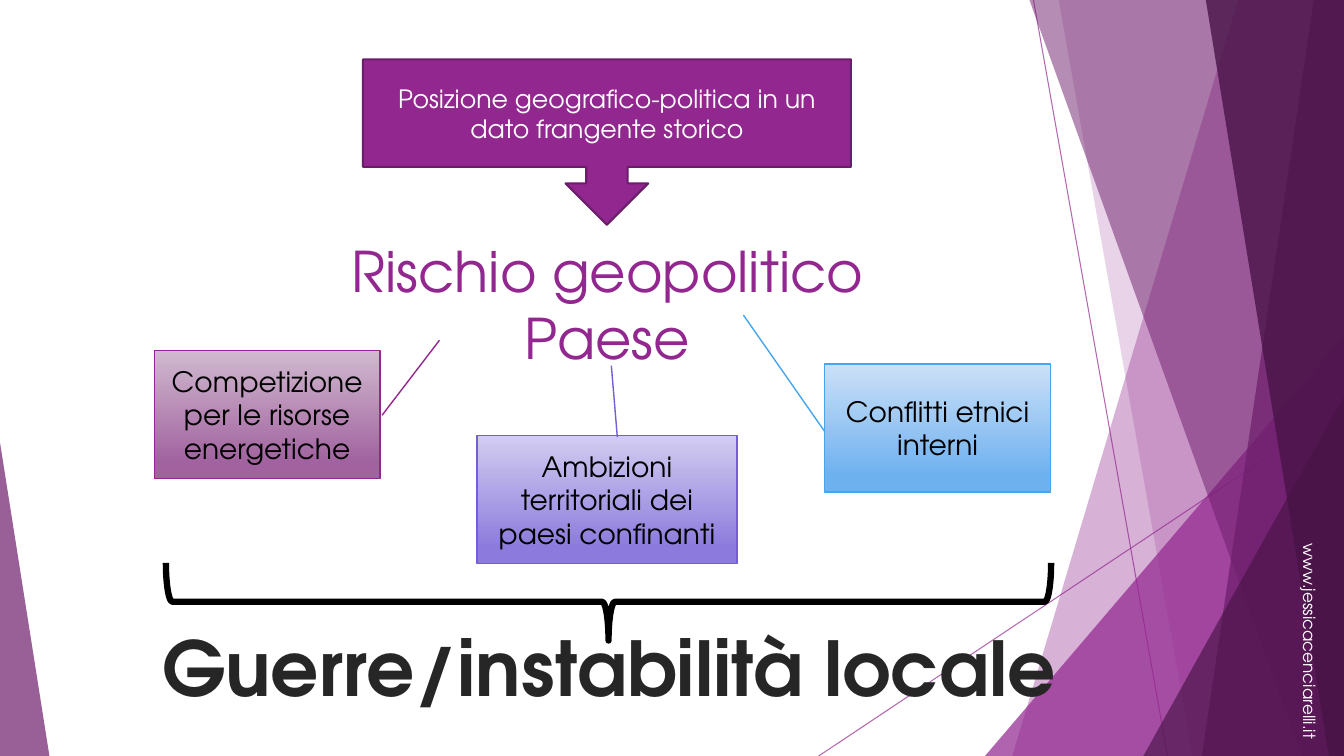
from dataclasses import dataclass

from lxml import etree
from pptx import Presentation, util as u
from pptx.dml.color import RGBColor
from pptx.enum import shapes, text
from pptx.oxml import ns

PX = 9144  # EMU per px, 100 px to the inch
WIDTH, HEIGHT = 1333, 750
PRESET = shapes.MSO_SHAPE


@dataclass(frozen=True)
class Theme:
    font: str = "TeX Gyre Adventor"
    white: str = "FFFFFF"
    black: str = "000000"
    ink: str = "262626"
    purple: str = "92278F"
    plum: str = "6D1D6B"
    dark: str = "491447"
    edge: str = "6C1D6A"
    mauve: tuple = ("D0B9CF", "A1629F", "92278F")
    violet: tuple = ("D2CDF0", "8C7BDD", "755DD9")
    blue: tuple = ("CCE0F8", "6EB1EF", "45A5ED")
    conclusion: int = 54
    title: int = 40
    factor: int = 20
    cause: int = 18
    credit: int = 12


def px(*lengths):
    return [u.Emu(length * PX) for length in lengths]


def set_alpha(fill, percent):
    """Make a solid fill translucent; percent is its opacity."""
    color = fill._xPr.find(".//" + ns.qn("a:srgbClr"))
    etree.SubElement(color, ns.qn("a:alpha"), val=str(percent * 1000))


def write(shape, lines, *, size, color, font, bold=False, outline=None):
    frame = shape.text_frame
    for index, line in enumerate(lines):
        para = frame.paragraphs[0] if index == 0 else frame.add_paragraph()
        para.alignment = text.PP_ALIGN.CENTER
        span = para.add_run()
        span.text = line
        span.font.name, span.font.size, span.font.bold = font, u.Pt(size), bold
        span.font.color.rgb = RGBColor.from_string(color)
        if outline:
            border = etree.Element(ns.qn("a:ln"), w=str(u.Pt(1.06)))
            solid = etree.SubElement(border, ns.qn("a:solidFill"))
            etree.SubElement(solid, ns.qn("a:srgbClr"), val=outline)
            span.font._element.insert(0, border)


class Painter:
    def __init__(self, page, theme):
        self.page, self.theme = page, theme

    def style(self, shape, fill=None, opacity=None, line=None, weight=1):
        shape.shadow.inherit = False
        if fill is None:
            shape.fill.background()
        elif isinstance(fill, tuple):
            shape.fill.gradient()
            shape.fill.gradient_angle = 270
            for stop, place, color in zip(shape.fill.gradient_stops, (0, 0.88), fill):
                stop.position = place
                stop.color.rgb = RGBColor.from_string(color)
        else:
            shape.fill.solid()
            shape.fill.fore_color.rgb = RGBColor.from_string(fill)
            if opacity:
                set_alpha(shape.fill, opacity)
        if line:
            shape.line.color.rgb = RGBColor.from_string(line)
            shape.line.width = u.Pt(weight)
        else:
            shape.line.fill.background()

    def shape(self, kind, at, adjust=(), rotation=0, **style):
        shape = self.page.shapes.add_shape(kind, *px(*at))
        for index, value in enumerate(adjust):
            shape.adjustments[index] = value
        shape.rotation = rotation
        self.style(shape, **style)
        return shape

    def ray(self, start, end):
        ray = self.page.shapes.add_connector(
            shapes.MSO_CONNECTOR.STRAIGHT, *px(*start, *end))
        ray.line.color.rgb = RGBColor.from_string(self.theme.purple)
        ray.line.width = u.Pt(0.75)
        set_alpha(ray.line.fill, 70)
        etree.SubElement(ray._element.spPr, ns.qn("a:effectLst"))

    def shard(self, top, bottom, color, opacity):
        """Fill the page from a slanted left edge to the right border."""
        builder = self.page.shapes.build_freeform(top, 0, scale=PX)
        builder.add_line_segments([(WIDTH, 0), (WIDTH, HEIGHT), (bottom, HEIGHT)])
        self.style(builder.convert_to_shape(), color, opacity)

    def wedge(self, left, top, width, apex, color, opacity):
        """Stand a right triangle on the bottom edge of the page."""
        self.shape(PRESET.ISOSCELES_TRIANGLE, (left, top, width, HEIGHT - top),
                   [apex], fill=color, opacity=opacity)

    def panel(self, kind, at, words, size, color, **style):
        panel = self.shape(kind, at, **style)
        panel.text_frame.word_wrap = True
        panel.text_frame.vertical_anchor = text.MSO_ANCHOR.MIDDLE
        write(panel, [words], size=size, color=color, font=self.theme.font)

    def label(self, at, lines, rotation=0, **style):
        box = self.page.shapes.add_textbox(*px(*at))
        box.rotation = rotation
        box.text_frame.word_wrap = False
        box.text_frame.auto_size = text.MSO_AUTO_SIZE.SHAPE_TO_FIT_TEXT
        write(box, lines, font=self.theme.font, **style)


def draw_backdrop(painter, theme):
    painter.ray((1025, 0), (1158, HEIGHT))
    painter.ray((WIDTH, 403), (812, HEIGHT))
    painter.shard(1228, 1004, theme.purple, 36)
    painter.shard(1050, 1183, theme.purple, 20)
    painter.wedge(977, 333, 356, 1, theme.purple, 72)
    painter.shard(1021, 1291, theme.plum, 50)
    painter.shard(1303, 1192, theme.plum, 70)
    painter.shard(1196, 1318, theme.dark, 80)
    painter.wedge(1134, 393, 199, 1, theme.dark, 66)
    painter.wedge(0, 439, 49, 0, theme.plum, 70)


def draw_diagram(painter, theme):
    painter.label((336, 230, 533, 145), ["Rischio geopolitico", "Paese"],
                  size=theme.title, color=theme.purple)
    painter.panel(PRESET.DOWN_ARROW_CALLOUT, (360, 59, 484, 164),
                  "Posizione geografico-politica in un dato frangente storico",
                  theme.cause, theme.white,
                  fill=theme.purple, line=theme.edge, weight=1.5)
    factors = [
        ("Competizione per le risorse energetiche", (153, 348, 224, 127),
         (-0.082, 1.263, 0.504, 1.009), theme.mauve),
        ("Ambizioni territoriali dei paesi confinanti", (473, 432, 258, 127),
         (-0.545, 0.517, 0.014, 0.54), theme.violet),
        ("Conflitti etnici interni", (818, 361, 224, 127),
         (-0.381, -0.36, 0.531, 0.001), theme.blue),
    ]
    for words, at, leader, (light, deep, border) in factors:
        painter.panel(PRESET.LINE_CALLOUT_1, at, words, theme.factor, theme.black,
                      adjust=leader, fill=(light, deep), line=border)
    painter.label((149, 611, 910, 101), ["Guerre/instabilità locale"],
                  size=theme.conclusion, color=theme.ink, bold=True,
                  outline=theme.white)
    painter.shape(PRESET.RIGHT_BRACE, (565, 158, 77, 878), rotation=90,
                  line=theme.black, weight=4.5)
    painter.label((1190, 621, 218, 30), ["www.jessicacenciarelli.it"], rotation=90,
                  size=theme.credit, color=theme.white)


def main():
    deck = Presentation()
    deck.slide_width, deck.slide_height = px(WIDTH, HEIGHT)
    theme = Theme()
    painter = Painter(deck.slides.add_slide(deck.slide_layouts[6]), theme)
    draw_backdrop(painter, theme)
    draw_diagram(painter, theme)
    deck.save("out.pptx")


if __name__ == "__main__":
    main()
